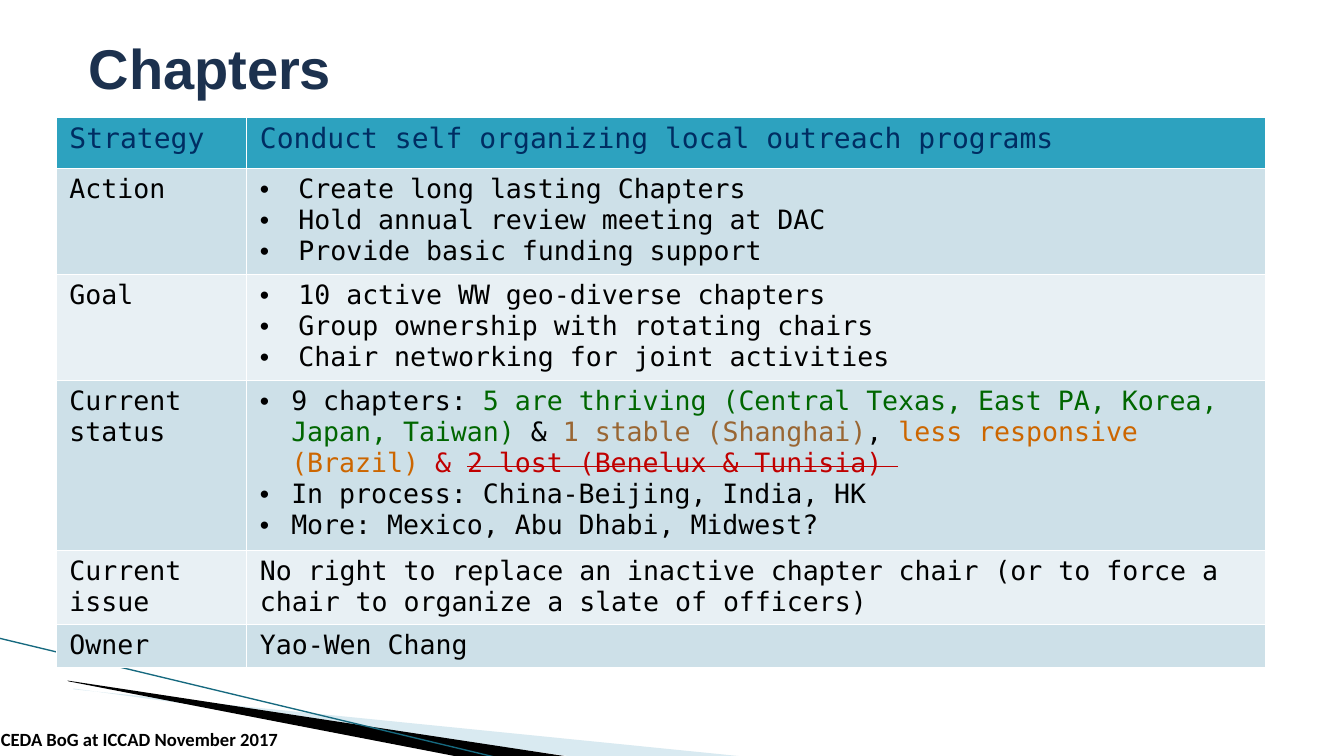
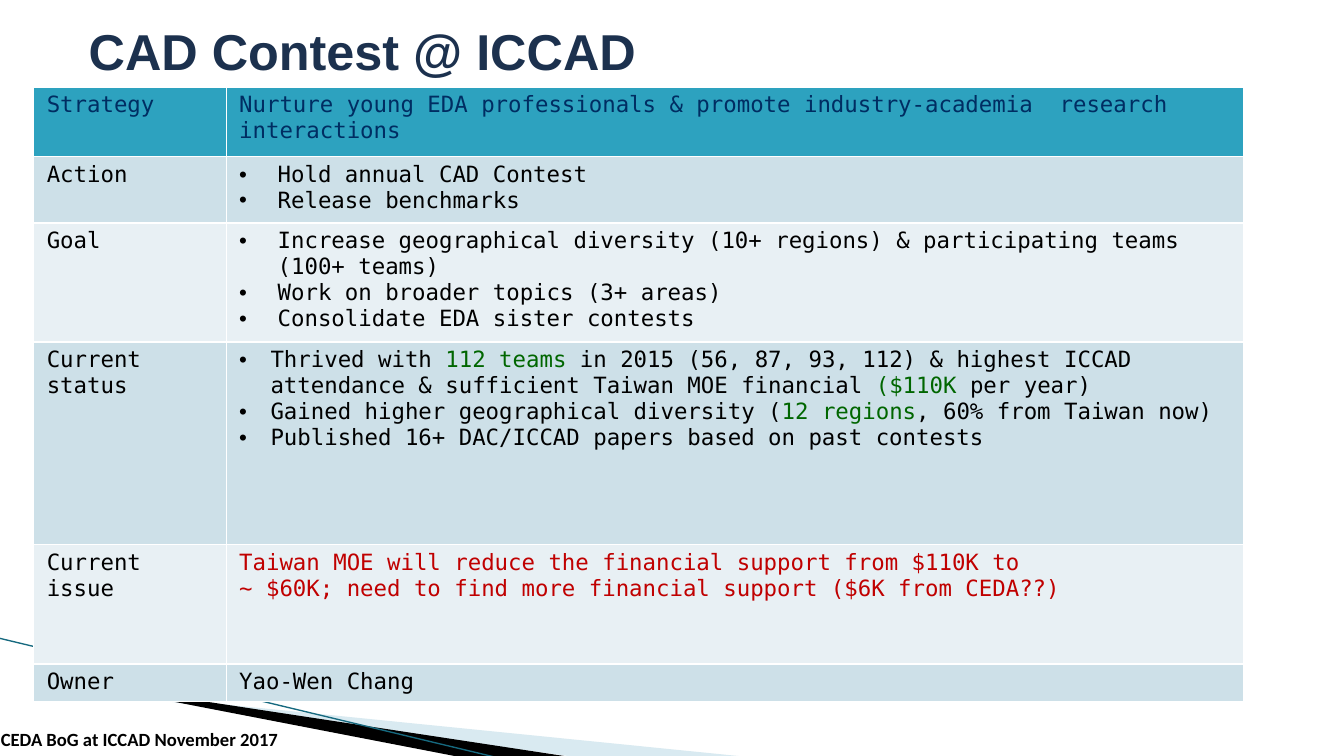
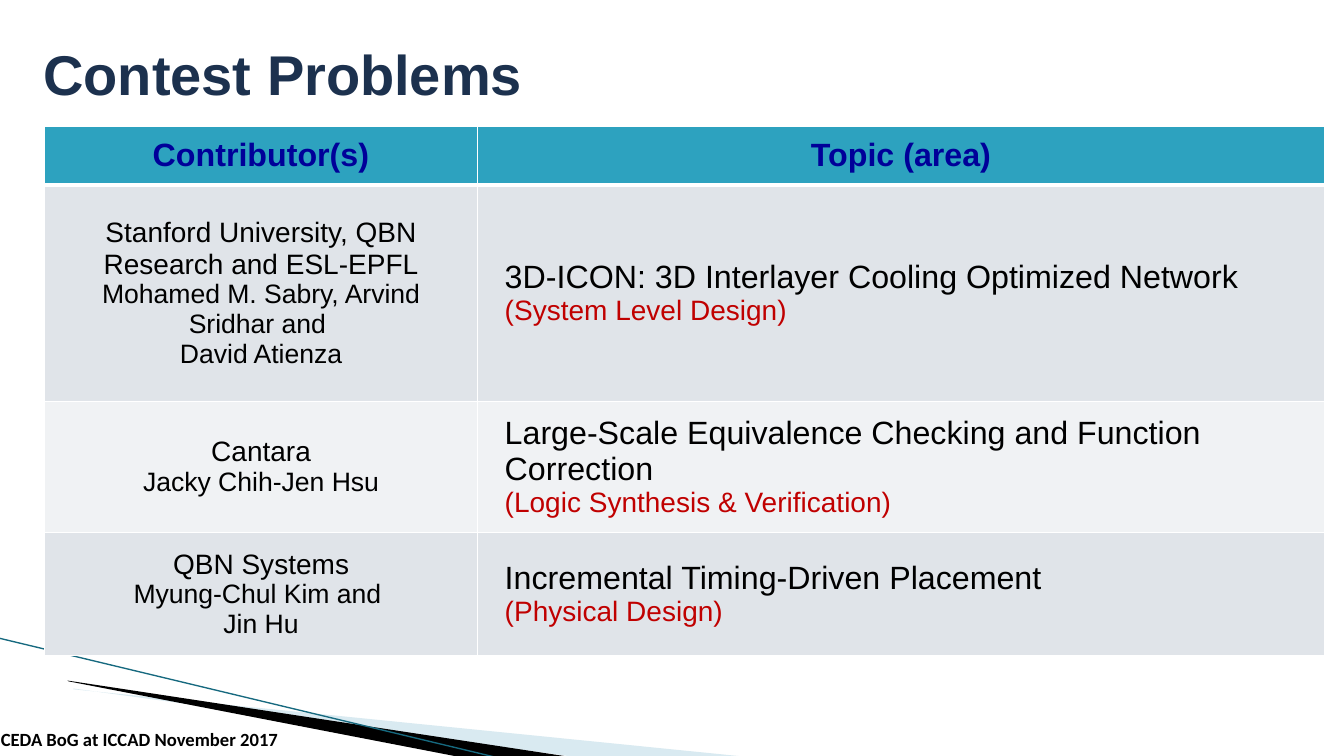
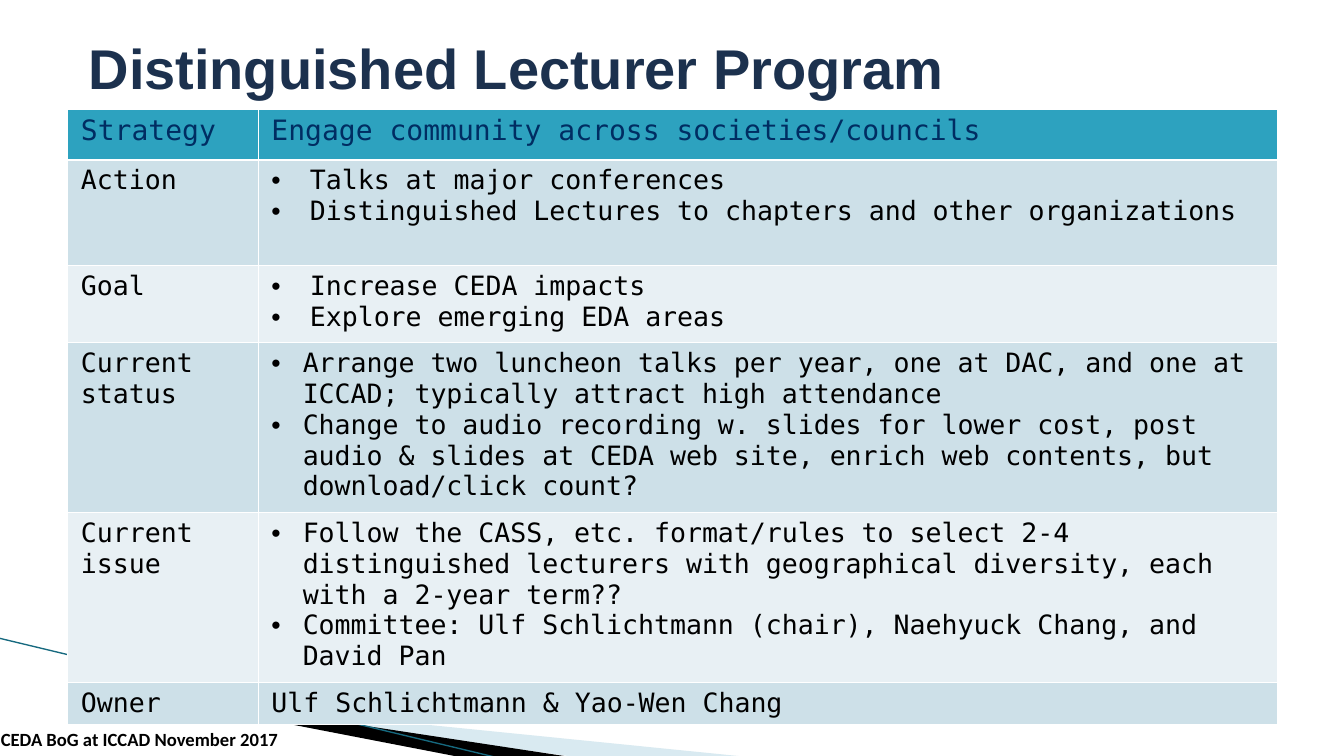
from lxml import etree
from pptx import Presentation
from pptx.dml.color import RGBColor
from pptx.enum.shapes import MSO_CONNECTOR
from pptx.enum.text import MSO_ANCHOR, PP_ALIGN
from pptx.oxml.ns import qn
from pptx.util import Cm, Pt

# Colours
WHITE = RGBColor(0xFF, 0xFF, 0xFF)
BLACK = RGBColor(0x00, 0x00, 0x00)
TITLE_NAVY = RGBColor(0x1C, 0x31, 0x4E)
STRATEGY_NAVY = RGBColor(0x00, 0x2D, 0x62)
HEADER_BLUE = RGBColor(0x00, 0x00, 0x99)
HEADER_TEAL = RGBColor(0x2D, 0xA2, 0xBF)
BLUE_BANDS = (RGBColor(0xCD, 0xE0, 0xE8), RGBColor(0xE8, 0xF0, 0xF4))
GREY_BANDS = (RGBColor(0xE0, 0xE4, 0xE9), RGBColor(0xF0, 0xF2, 0xF4))
GREEN = RGBColor(0x00, 0x66, 0x00)
BROWN = RGBColor(0x99, 0x66, 0x33)
ORANGE = RGBColor(0xCC, 0x66, 0x00)
RED = RGBColor(0xC0, 0x00, 0x00)
WEDGE_BLUE = RGBColor(0xA0, 0xCB, 0xDC)
LINE_TEAL = RGBColor(0x16, 0x69, 0x7F)

# Fonts and indents (cm)
SANS, MONO, FOOTER_FONT = "Arial", "DejaVu Sans Mono", "Calibri"
WIDE, NARROW = 0.97, 0.79
FOOTER = "CEDA BoG at ICCAD November 2017"


# Text
def part(text, **look):
    """A stretch of text with its own format."""
    return text, look


def add_text(paragraph, text, size=19, font=MONO, color=BLACK, bold=False, strike=False):
    for number, line in enumerate(text.split("\n")):
        if number:
            paragraph.add_line_break()
        run = paragraph.add_run()
        run.text = line
        run.font.size = Pt(size)
        run.font.name = font
        run.font.bold = bold
        run.font.color.rgb = color
        if strike:
            run.font._element.set("strike", "sngStrike")


def add_bullet(paragraph, indent):
    properties = paragraph._p.get_or_add_pPr()
    properties.set("marL", str(Cm(indent)))
    properties.set("indent", str(-Cm(indent)))
    etree.SubElement(properties, qn("a:buFont"), typeface=SANS)
    etree.SubElement(properties, qn("a:buChar"), char="•")


def fill_frame(frame, paragraphs, indent=None, align=PP_ALIGN.LEFT, **look):
    """Each paragraph is a string or a list of strings and parts."""
    for number, content in enumerate(paragraphs):
        paragraph = frame.add_paragraph() if number else frame.paragraphs[0]
        paragraph.alignment = align
        if indent:
            add_bullet(paragraph, indent)
        for piece in [content] if isinstance(content, str) else content:
            text, own = part(piece) if isinstance(piece, str) else piece
            add_text(paragraph, text, **{**look, **own})


# Shared slide parts
def add_wedge(slide, points, color, alpha=None):
    corners = [(Cm(x), Cm(y)) for x, y in points]
    builder = slide.shapes.build_freeform(*corners[0])
    builder.add_line_segments(corners[1:])
    wedge = builder.convert_to_shape()
    wedge.shadow.inherit = False
    wedge.fill.solid()
    wedge.fill.fore_color.rgb = color
    wedge.line.fill.background()
    if alpha:
        swatch = wedge.element.spPr.find(".//" + qn("a:srgbClr"))
        etree.SubElement(swatch, qn("a:alpha"), val=str(alpha * 1000))
    return wedge


def decorate_layout(slide):
    """Draw the swoosh on a slide, then move it behind all slides of its layout."""
    pale = add_wedge(slide, [(1.85, 17.37), (18.9, 19.08), (14.53, 19.08), (1.85, 17.35)],
                     WEDGE_BLUE, alpha=40)
    dark = add_wedge(slide, [(1.7, 17.15), (14.4, 19.08), (11.71, 19.1), (1.73, 17.17)], BLACK)
    line = slide.shapes.add_connector(MSO_CONNECTOR.STRAIGHT, Cm(-0.03), Cm(16.08),
                                      Cm(12.57), Cm(19.1))
    line.line.color.rgb = LINE_TEAL
    line.line.width = Pt(0.95)
    etree.SubElement(line.element.spPr, qn("a:effectLst"))
    for position, shape in enumerate((pale, dark, line), start=2):
        slide.slide_layout.shapes.element.insert(position, shape.element)


def add_slide(presentation, title, left=1.98, top=0.41, width=29.11, height=2.54, size=40):
    slide = presentation.slides.add_slide(presentation.slide_layouts[5])
    holder = slide.shapes.title
    holder.left, holder.top, holder.width, holder.height = map(Cm, (left, top, width, height))
    holder.text_frame.vertical_anchor = MSO_ANCHOR.MIDDLE
    fill_frame(holder.text_frame, [title], size=size, font=SANS, color=TITLE_NAVY, bold=True)

    footer = slide.shapes.add_textbox(Cm(-0.23), Cm(18.42), Cm(8.71), Cm(0.61))
    footer.text_frame.word_wrap = True
    footer.text_frame.vertical_anchor = MSO_ANCHOR.BOTTOM
    fill_frame(footer.text_frame, [FOOTER], size=13.3, font=FOOTER_FONT, bold=True)
    return slide


# Tables
def add_border(cell, side, width):
    border = etree.SubElement(cell._tc.get_or_add_tcPr(), qn("a:ln" + side), w=str(Pt(width)))
    fill = etree.SubElement(border, qn("a:solidFill"))
    etree.SubElement(fill, qn("a:srgbClr"), val=str(WHITE))


def add_grid(slide, left, top, widths, heights, bands, margins, anchor, header_rule=1):
    """A table with a teal header, banded rows and white rules."""
    table = slide.shapes.add_table(len(heights), len(widths), Cm(left), Cm(top),
                                   Cm(sum(widths)), Cm(sum(heights))).table
    table.first_row = table.horz_banding = False
    for column, width in zip(table.columns, widths):
        column.width = Cm(width)
    for number, (row, height) in enumerate(zip(table.rows, heights)):
        row.height = Cm(height)
        for cell in row.cells:
            cell.margin_left = cell.margin_right = Cm(margins[0])
            cell.margin_top = cell.margin_bottom = Cm(margins[1])
            cell.vertical_anchor = anchor
            for side in "LRTB":
                under_header = (number, side) in ((0, "B"), (1, "T"))
                add_border(cell, side, header_rule if under_header else 1)
            cell.fill.solid()
            cell.fill.fore_color.rgb = bands[(number - 1) % 2] if number else HEADER_TEAL
    return table


def add_strategy_table(slide, left, top, label_width, rows, header_size=20, size=19):
    """Rows are (height, label, paragraphs, bullet indent)."""
    table = add_grid(slide, left, top, (label_width, 30.48 - label_width),
                     [row[0] for row in rows], BLUE_BANDS, (0.33, 0.13), MSO_ANCHOR.TOP)
    for number, (_, label, paragraphs, indent) in enumerate(rows):
        look = dict(size=size) if number else dict(size=header_size, color=STRATEGY_NAVY)
        fill_frame(table.cell(number, 0).text_frame, [label], **look)
        fill_frame(table.cell(number, 1).text_frame, paragraphs, indent, **look)


def add_problem_table(slide, heights, problems):
    """Problems are (organisation, people, topic, area)."""
    table = add_grid(slide, 1.12, 3.18, (10.92, 21.34), heights, GREY_BANDS,
                     (0.68, 0.25), MSO_ANCHOR.MIDDLE, header_rule=3)
    for column, heading in enumerate(("Contributor(s)", "Topic (area)")):
        fill_frame(table.cell(0, column).text_frame, [heading], align=PP_ALIGN.CENTER,
                   size=23, font=SANS, color=HEADER_BLUE, bold=True)
    for number, (organisation, people, topic, area) in enumerate(problems, start=1):
        fill_frame(table.cell(number, 0).text_frame, [[part(organisation, size=20)], people],
                   align=PP_ALIGN.CENTER, font=SANS)
        fill_frame(table.cell(number, 1).text_frame,
                   [[part(topic, size=23)], [part(area, size=20, color=RED)]], font=SANS)


# Slides
def add_chapters(presentation):
    slide = add_slide(presentation, "Chapters")
    decorate_layout(slide)
    chapters = [
        "9 chapters: ",
        part("5 are thriving (Central Texas, East PA, Korea, Japan, Taiwan) ", color=GREEN),
        "& ", part("1 stable (Shanghai)", color=BROWN),
        ", ", part("less responsive (Brazil) ", color=ORANGE),
        part("& ", color=RED), part("2 lost (Benelux & Tunisia) ", color=RED, strike=True),
    ]
    add_strategy_table(slide, 1.42, 2.95, 4.8, [
        (1.3, "Strategy", ["Conduct self organizing local outreach programs"], None),
        (2.67, "Action", ["Create long lasting Chapters",
                          "Hold annual review meeting at DAC",
                          "Provide basic funding support"], WIDE),
        (2.67, "Goal", ["10 active WW geo-diverse chapters",
                        "Group ownership with rotating chairs",
                        "Chair networking for joint activities"], WIDE),
        (4.27, "Current status", [chapters,
                                  "In process: China-Beijing, India, HK",
                                  "More: Mexico, Abu Dhabi, Midwest?"], NARROW),
        (1.85, "Current issue", ["No right to replace an inactive chapter chair "
                                 "(or to force a chair to organize a slate of officers)"], None),
        (1.07, "Owner", ["Yao-Wen Chang"], None),
    ])


def add_contest(presentation):
    slide = add_slide(presentation, "CAD Contest @ ICCAD", height=1.73, size=36)
    teams = [
        "Thrived with ", part("112 teams ", color=GREEN),
        "in 2015 (56, 87, 93, 112) & highest ICCAD attendance & sufficient "
        "Taiwan MOE financial ", part("($110K ", color=GREEN), "per year)",
    ]
    regions = ["Gained higher geographical diversity (", part("12 regions", color=GREEN),
               ", 60% from Taiwan now)"]
    support = ["Taiwan MOE will reduce the financial support from $110K to",
               "~ $60K; need to find more financial support ($6K from CEDA??)"]
    add_strategy_table(slide, 0.85, 2.19, 4.85, [
        (1.75, "Strategy", ["Nurture young EDA professionals & promote "
                            "industry-academia  research interactions"], None),
        (1.68, "Action", ["Hold annual CAD Contest", "Release benchmarks"], WIDE),
        (3.0, "Goal", ["Increase geographical diversity (10+ regions) & "
                       "participating teams (100+ teams)",
                       "Work on broader topics (3+ areas)",
                       "Consolidate EDA sister contests"], WIDE),
        (5.11, "Current status", [teams, regions,
                                  "Published 16+ DAC/ICCAD papers based on past contests"],
         NARROW),
        (3.0, "Current issue", [[part(line, color=RED)] for line in support], None),
        (0.94, "Owner", ["Yao-Wen Chang"], None),
    ], header_size=16, size=16)


def add_problems(presentation):
    slide = add_slide(presentation, "Contest Problems", 0.84, 0.64, 26.24, 2.41)
    add_problem_table(slide, (1.47, 5.46, 3.3, 3.1), [
        ("Stanford University, QBN Research and ESL-EPFL",
         "Mohamed M. Sabry, Arvind Sridhar and \nDavid Atienza",
         "3D-ICON: 3D Interlayer Cooling Optimized Network", "(System Level Design)"),
        ("Cantara", "Jacky Chih-Jen Hsu",
         "Large-Scale Equivalence Checking and Function Correction",
         "(Logic Synthesis & Verification)"),
        ("QBN Systems", "Myung-Chul Kim and \nJin Hu",
         "Incremental Timing-Driven Placement", "(Physical Design)"),
    ])


def add_lecturers(presentation):
    slide = add_slide(presentation, "Distinguished Lecturer Program")
    add_strategy_table(slide, 1.71, 2.76, 4.8, [
        (1.27, "Strategy", ["Engage community across societies/councils"], None),
        (2.67, "Action", ["Talks at major conferences",
                          "Distinguished Lectures to chapters and other organizations"], WIDE),
        (1.93, "Goal", ["Increase CEDA impacts", "Explore emerging EDA areas"], WIDE),
        (4.27, "Current status", [
            "Arrange two luncheon talks per year, one at DAC, and one at ICCAD; "
            "typically attract high attendance",
            "Change to audio recording w. slides for lower cost, post audio & slides at "
            "CEDA web site, enrich web contents, but download/click count?"], NARROW),
        (4.27, "Current issue", [
            "Follow the CASS, etc. format/rules to select 2-4 distinguished lecturers "
            "with geographical diversity, each with a 2-year term??",
            "Committee: Ulf Schlichtmann (chair), Naehyuck Chang, and David Pan"], NARROW),
        (1.07, "Owner", ["Ulf Schlichtmann & Yao-Wen Chang"], None),
    ])


def main():
    presentation = Presentation()
    presentation.slide_width, presentation.slide_height = Cm(33.87), Cm(19.05)
    add_chapters(presentation)
    add_contest(presentation)
    add_problems(presentation)
    add_lecturers(presentation)
    presentation.save("out.pptx")


if __name__ == "__main__":
    main()
